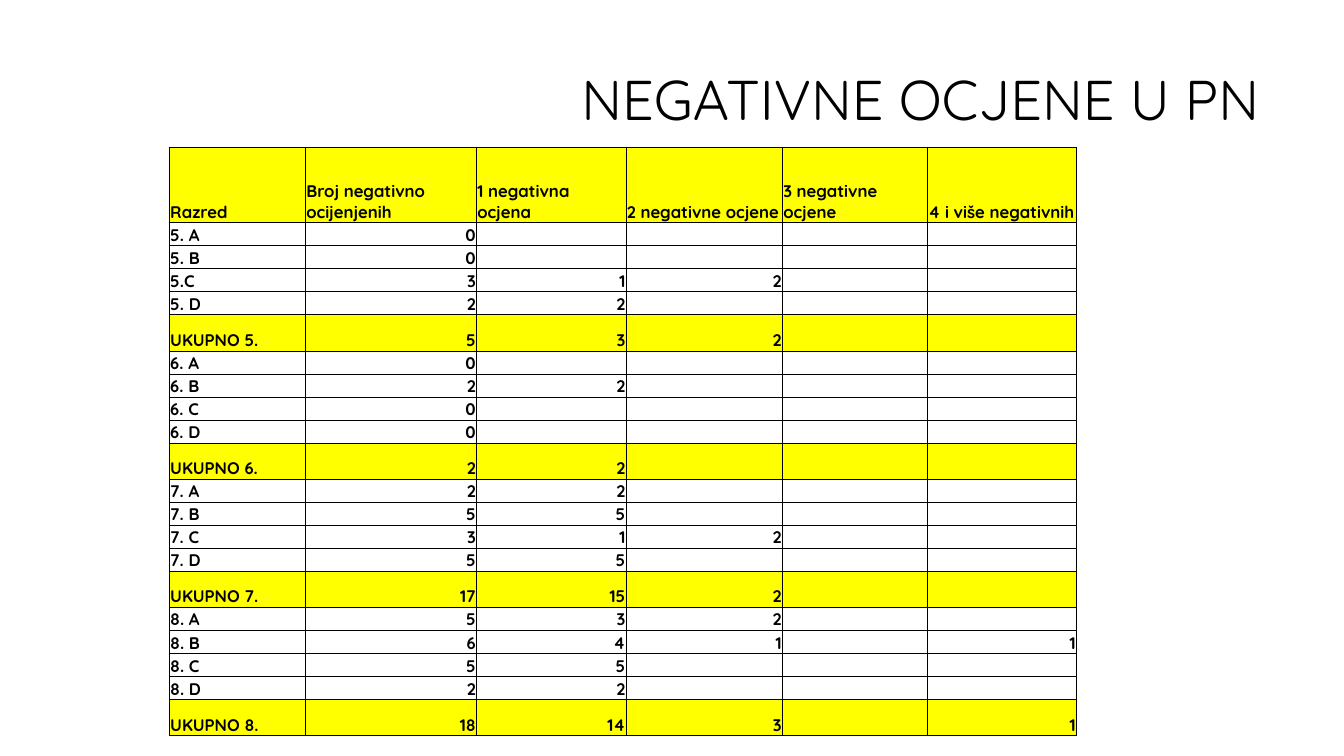
from lxml.etree import SubElement
from pptx import Presentation
from pptx.dml.color import RGBColor
from pptx.enum.text import MSO_ANCHOR as Anchor, PP_ALIGN as Align
from pptx.oxml.ns import qn
from pptx.util import Cm, Pt

BLACK = RGBColor(0x00, 0x00, 0x00)
YELLOW = RGBColor(0xFF, 0xFF, 0x00)
FONT = "Quicksand"
CELL_SIZE = Pt(12)
BORDER_WIDTH = Pt(0.5)

TITLE_BOX = (Cm(8.05), Cm(1.47), Cm(23.93), Cm(2.21))
TABLE_BOX = (Cm(4.27), Cm(3.7), Cm(22.86), Cm(14.8))
COLUMN_WIDTHS = (3.43, 4.31, 3.77, 3.94, 3.66, 3.75)
HEADER_HEIGHT, CLASS_HEIGHT, TOTAL_HEIGHT = Cm(1.91), Cm(0.58), Cm(0.91)

HEADER = ("Razred", "Broj negativno ocijenjenih", "1 negativna ocjena",
          "2 negativne ocjene", "3 negativne ocjene", "4 i više negativnih")
TOTAL_LABEL = "UKUPNO"
ROWS = (
    ("5. A", 0),
    ("5. B", 0),
    ("5.C", 3, 1, 2),
    ("5. D", 2, 2),
    ("UKUPNO 5.", 5, 3, 2),
    ("6. A", 0),
    ("6. B", 2, 2),
    ("6. C", 0),
    ("6. D", 0),
    ("UKUPNO 6.", 2, 2),
    ("7. A", 2, 2),
    ("7. B", 5, 5),
    ("7. C", 3, 1, 2),
    ("7. D", 5, 5),
    ("UKUPNO 7.", 17, 15, 2),
    ("8. A", 5, 3, 2),
    ("8. B", 6, 4, 1, "", 1),
    ("8. C", 5, 5),
    ("8. D", 2, 2),
    ("UKUPNO 8.", 18, 14, 3, "", 1),
)


def set_attributes(target, values):
    for name, value in values.items():
        setattr(target, name, value)


def write_text(paragraph, text, size, bold, alignment):
    paragraph.alignment = alignment
    run = paragraph.add_run()
    run.text = text
    set_attributes(run.font, {"name": FONT, "size": size, "bold": bold})
    run.font.color.rgb = BLACK


def add_title(slide, box, text):
    frame = slide.shapes.add_textbox(*box).text_frame
    set_attributes(frame, {"word_wrap": True, "vertical_anchor": Anchor.MIDDLE})
    paragraph = frame.paragraphs[0]
    paragraph.line_spacing = 0.9
    write_text(paragraph, text, Pt(40), False, Align.RIGHT)


def add_borders(cell):
    properties = cell._tc.get_or_add_tcPr()
    for side in ("a:lnL", "a:lnR", "a:lnT", "a:lnB"):
        line = SubElement(properties, qn(side), w=str(BORDER_WIDTH))
        fill = SubElement(line, qn("a:solidFill"))
        SubElement(fill, qn("a:srgbClr"), val=str(BLACK))


def fill_cell(cell, value, highlighted):
    set_attributes(cell, {
        "margin_left": Cm(0.02), "margin_right": Cm(0.02),
        "margin_top": Cm(0.02), "margin_bottom": 0,
        "vertical_anchor": Anchor.BOTTOM,
    })
    add_borders(cell)
    if highlighted:
        cell.fill.solid()
        cell.fill.fore_color.rgb = YELLOW
    else:
        cell.fill.background()
    paragraph = cell.text_frame.paragraphs[0]
    if value == "":
        # The end mark keeps an empty cell from stretching its row
        SubElement(paragraph._p, qn("a:endParaRPr"), sz=str(int(CELL_SIZE.pt * 100)))
    else:
        alignment = Align.RIGHT if isinstance(value, int) else Align.LEFT
        write_text(paragraph, str(value), CELL_SIZE, True, alignment)


def add_grades_table(slide, box, header, rows):
    table = slide.shapes.add_table(len(rows) + 1, len(header), *box).table
    set_attributes(table, {"first_row": False, "horz_banding": False})
    for column, width in zip(table.columns, COLUMN_WIDTHS):
        column.width = Cm(width)
    for row, values in zip(table.rows, (header, *rows)):
        is_header = values is header
        is_total = values[0].startswith(TOTAL_LABEL)
        row.height = (HEADER_HEIGHT if is_header
                      else TOTAL_HEIGHT if is_total else CLASS_HEIGHT)
        padded = values + ("",) * (len(header) - len(values))
        for cell, value in zip(row.cells, padded):
            fill_cell(cell, value, is_header or is_total)


def main():
    presentation = Presentation()
    set_attributes(presentation, {"slide_width": Cm(33.87), "slide_height": Cm(19.05)})
    slide = presentation.slides.add_slide(presentation.slide_layouts[6])
    add_title(slide, TITLE_BOX, "NEGATIVNE OCJENE U PN")
    add_grades_table(slide, TABLE_BOX, HEADER, ROWS)
    presentation.save("out.pptx")


if __name__ == "__main__":
    main()
